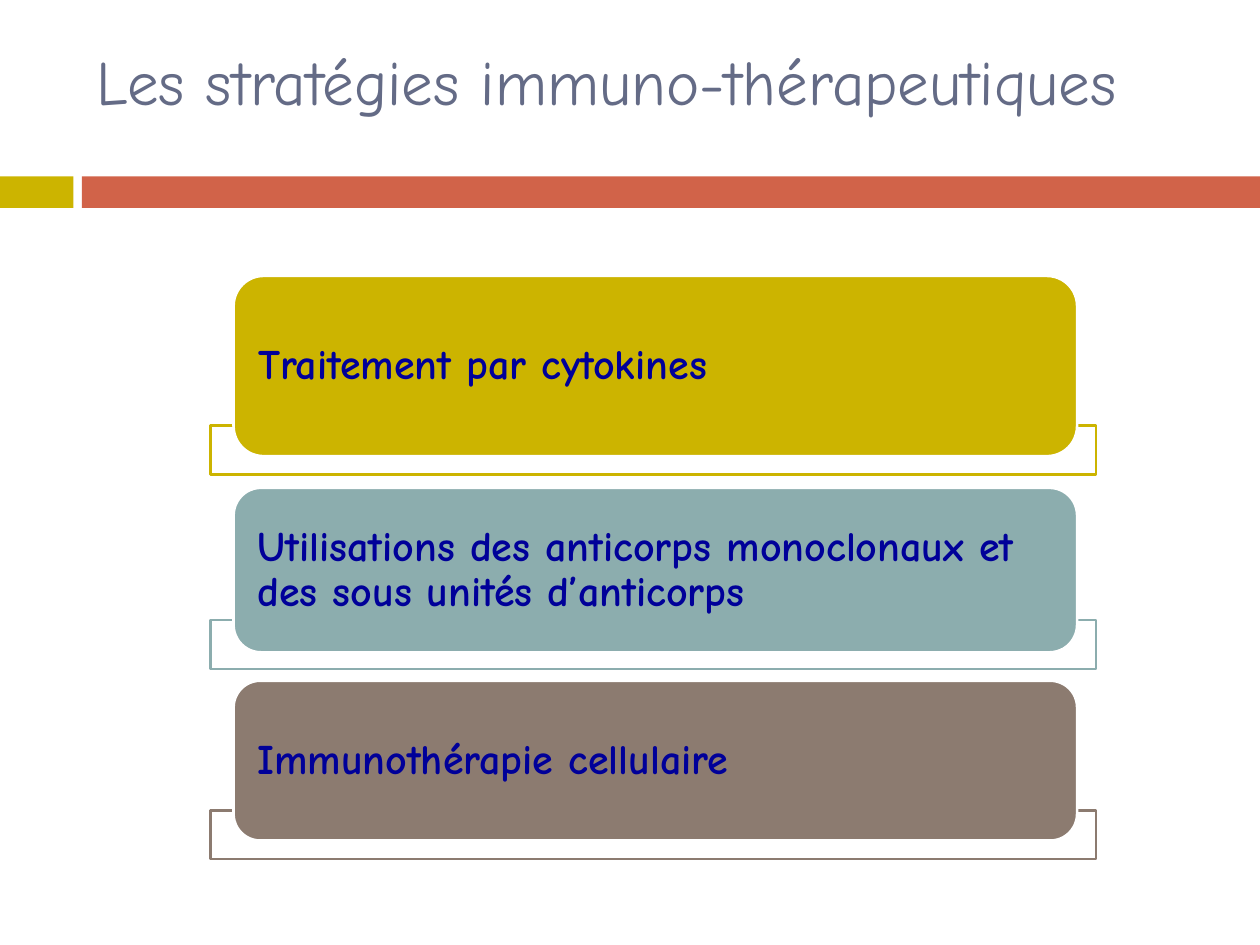
from dataclasses import dataclass

from lxml import etree
from pptx import Presentation
from pptx.dml.color import RGBColor
from pptx.enum import shapes, text
from pptx.oxml.ns import qn
from pptx.util import Pt

FONT = "Comic Neue"
HUES = {
    "white": "FFFFFF",
    "gold": "CCB400",
    "coral": "D16349",
    "teal": "8CADAE",
    "brown": "8C7B70",
    "slate": "646B86",
    "navy": "000099",
}


@dataclass
class Card:
    label: str
    hue: str
    top: float
    high: float
    tray: float  # top of the frame behind the card


CARDS = [
    Card("Traitement par cytokines", "gold", 157.7, 103, 243.3),
    Card("Utilisations des anticorps monoclonaux et des sous unités d’anticorps",
         "teal", 278.8, 94, 354.3),
    Card("Immunothérapie cellulaire", "brown", 389, 91.3, 463),
]


def rgb(hue: str) -> RGBColor:
    return RGBColor.from_string(HUES[hue])


def draw(slide, kind, box: tuple, fill: str, line: str = ""):
    """Add a flat shape; box is left, top, width, height in points."""
    shape = slide.shapes.add_shape(kind, *map(Pt, box))
    shape.shadow.inherit = False
    shape.fill.solid()
    shape.fill.fore_color.rgb = rgb(fill)
    if line:
        shape.line.color.rgb = rgb(line)
        shape.line.width = Pt(1.5)
    else:
        shape.line.fill.background()
    return shape


def write(shape, words: str, size: float, hue: str, inset: float, bold: bool = False):
    """Set left-aligned text, centred in height."""
    frame = shape.text_frame
    frame.text = words
    frame.word_wrap = True
    frame.vertical_anchor = text.MSO_ANCHOR.MIDDLE
    frame.margin_left = frame.margin_right = Pt(inset)
    frame.margin_top = frame.margin_bottom = 0
    para = frame.paragraphs[0]
    para.alignment = text.PP_ALIGN.LEFT
    font = para.runs[0].font
    font.name, font.size, font.bold = FONT, Pt(size), bold
    font.color.rgb = rgb(hue)
    return para


def fade(shape, share: int) -> None:
    """Set the opacity of a solid fill, in percent."""
    tint = shape.fill._xPr.find(qn("a:solidFill"))[0]
    etree.SubElement(tint, qn("a:alpha")).set("val", str(share * 1000))


def add_card(slide, card: Card) -> None:
    kind = shapes.MSO_SHAPE
    tray = draw(slide, kind.RECTANGLE, (120.2, card.tray, 506.2, 28), "white", card.hue)
    fade(tray, 90)
    box = (133.5, card.top, 482, card.high)
    face = draw(slide, kind.ROUNDED_RECTANGLE, box, card.hue, "white")
    para = write(face, card.label, 24, "navy", 9, True)
    para.line_spacing = 0.9


def main() -> None:
    deck = Presentation()
    deck.slide_width, deck.slide_height = Pt(720), Pt(540)
    slide = deck.slides.add_slide(deck.slide_layouts[6])

    # Title and the band below it
    rect = shapes.MSO_SHAPE.RECTANGLE
    draw(slide, rect, (0, 100.8, 42, 18), "gold")
    draw(slide, rect, (46.8, 100.8, 673.2, 18), "coral")
    title = slide.shapes.add_textbox(Pt(48.2), Pt(24), Pt(671.8), Pt(44))
    write(title, "Les stratégies immuno-thérapeutiques", 36, "slate", 7.2)

    # Three strategies
    for card in CARDS:
        add_card(slide, card)

    deck.save("out.pptx")


if __name__ == "__main__":
    main()
